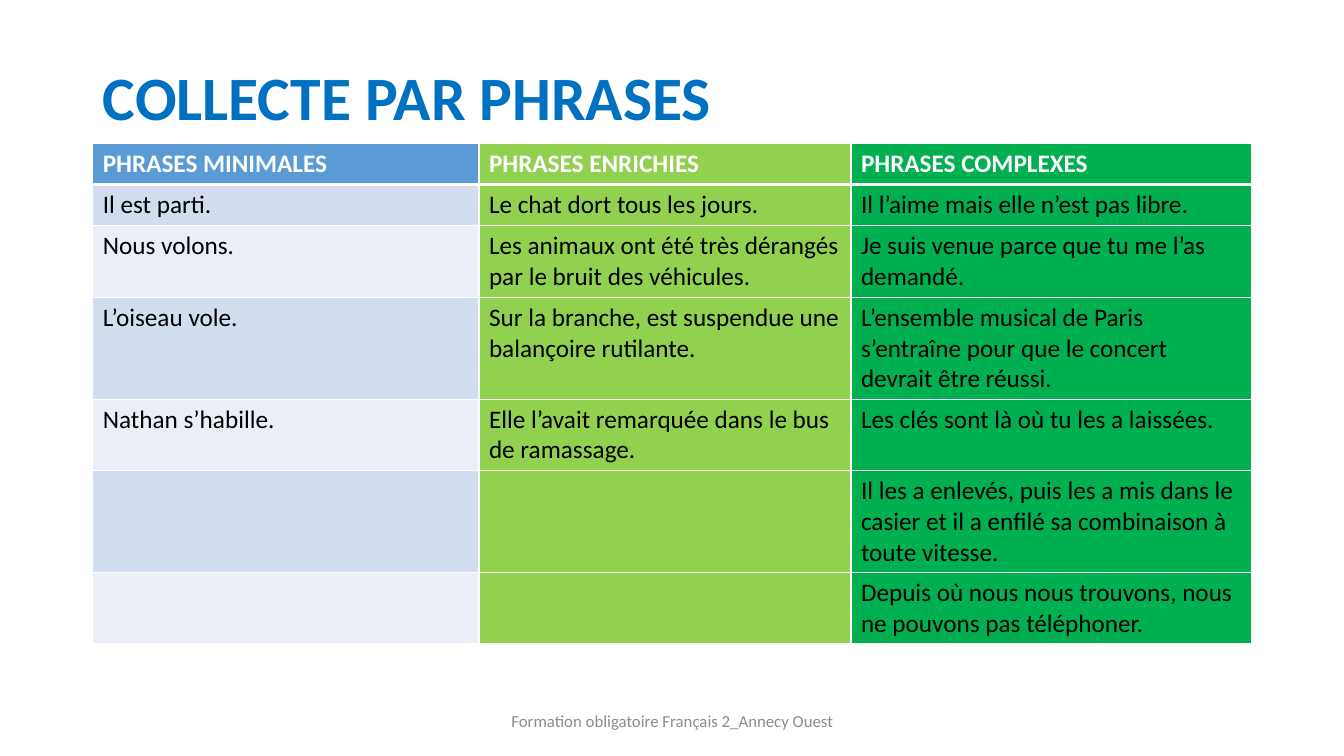
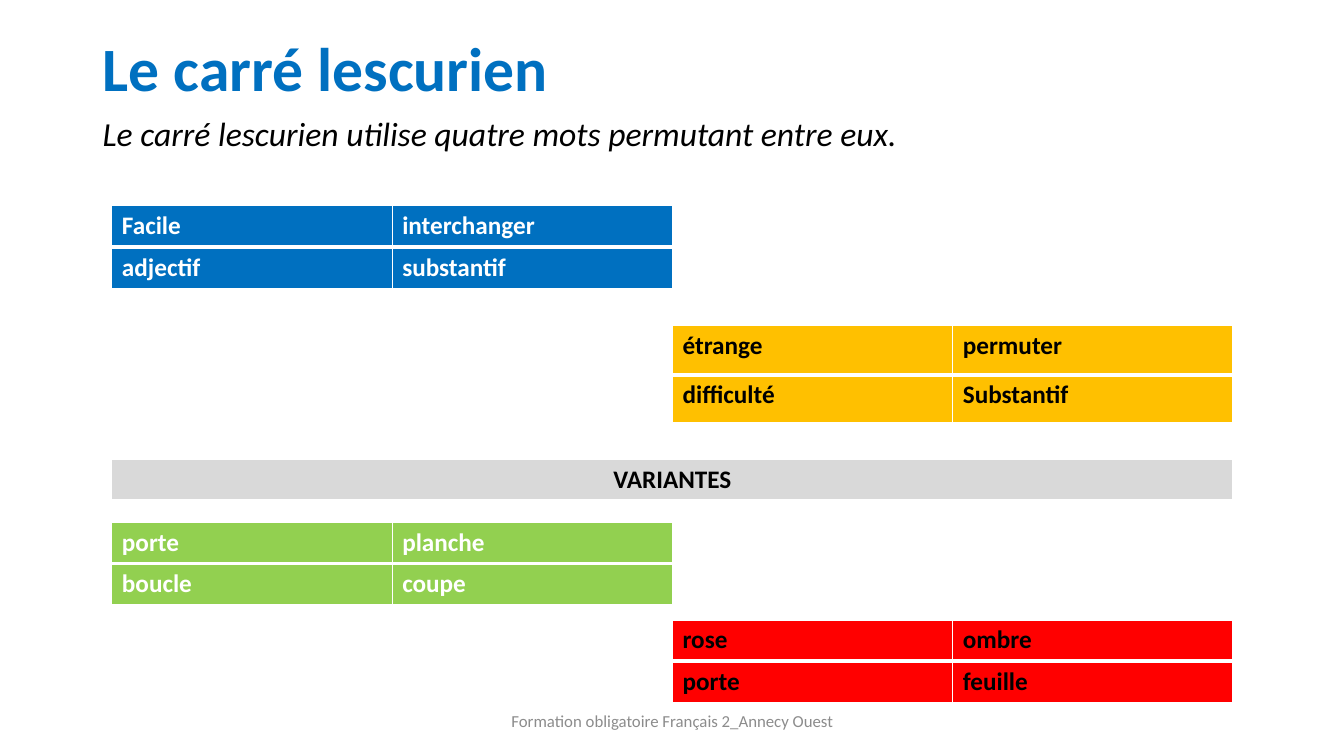
from lxml import etree
from pptx import Presentation
from pptx.dml.color import RGBColor
from pptx.enum.text import MSO_ANCHOR, PP_ALIGN
from pptx.oxml.ns import qn
from pptx.util import Inches, Pt

LEFT, CENTER = PP_ALIGN.LEFT, PP_ALIGN.CENTER
TOP, MIDDLE = MSO_ANCHOR.TOP, MSO_ANCHOR.MIDDLE

FONT = "Calibri"
WHITE = RGBColor(0xFF, 0xFF, 0xFF)
BLACK = RGBColor(0x00, 0x00, 0x00)
BLUE = RGBColor(0x00, 0x70, 0xC0)
HEADER_BLUE = RGBColor(0x5B, 0x9B, 0xD5)
BAND_DARK = RGBColor(0xD2, 0xDE, 0xEF)
BAND_LIGHT = RGBColor(0xEA, 0xEF, 0xF7)
LIME = RGBColor(0x92, 0xD0, 0x50)
GREEN = RGBColor(0x00, 0xB0, 0x50)
AMBER = RGBColor(0xFF, 0xC0, 0x00)
RED = RGBColor(0xFF, 0x00, 0x00)
LIGHT_GRAY = RGBColor(0xD9, 0xD9, 0xD9)
FOOTER_GRAY = RGBColor(0x8C, 0x8C, 0x8C)

MARGIN, CONTENT_WIDTH = 0.92, 11.5
ROW_HEIGHT, EXTRA_LINE = 0.41, 0.3
FOOTER = "Formation obligatoire Français 2_Annecy Ouest"

SENTENCE_COLUMNS = [3.83, 3.69, 3.97]
SENTENCES = [
    ["PHRASES MINIMALES", "PHRASES ENRICHIES", "PHRASES COMPLEXES"],
    ["Il est parti.", "Le chat dort tous les jours.",
     "Il l’aime mais elle n’est pas libre."],
    ["Nous volons.",
     "Les animaux ont été très dérangés par le bruit des véhicules.",
     "Je suis venue parce que tu me l’as demandé."],
    ["L’oiseau vole.",
     "Sur la branche, est suspendue une balançoire rutilante.",
     "L’ensemble musical de Paris s’entraîne pour que le concert devrait être réussi."],
    ["Nathan s’habille.",
     "Elle l’avait remarquée dans le bus de ramassage.",
     "Les clés sont là où tu les a laissées."],
    ["", "",
     "Il les a enlevés, puis les a mis dans le casier et il a enfilé sa "
     "combinaison à toute vitesse."],
    ["", "", "Depuis où nous nous trouvons, nous ne pouvons pas téléphoner."],
]
SENTENCE_LINES = [1, 1, 2, 3, 2, 3, 2]

SQUARE_LEFT, SQUARE_COLUMN = 1.11, 2.78
SQUARE_RIGHT = SQUARE_LEFT + 2 * SQUARE_COLUMN
# left, top, row heights, fill, text colour, words
SQUARES = [
    (SQUARE_LEFT, 2.04, [ROW_HEIGHT] * 2, BLUE, WHITE,
     [["Facile", "interchanger"], ["adjectif", "substantif"]]),
    (SQUARE_RIGHT, 3.23, [0.49, 0.47], AMBER, BLACK,
     [["étrange", "permuter"], ["difficulté", "Substantif"]]),
    (SQUARE_LEFT, 5.18, [ROW_HEIGHT] * 2, LIME, WHITE,
     [["porte", "planche"], ["boucle", "coupe"]]),
    (SQUARE_RIGHT, 6.15, [ROW_HEIGHT] * 2, RED, BLACK,
     [["rose", "ombre"], ["porte", "feuille"]]),
]


def write(text_frame, text, size, color, bold=False, italic=False, align=LEFT):
    paragraph = text_frame.paragraphs[0]
    paragraph.alignment = align
    if text:
        run = paragraph.add_run()
        run.text = text
        font = run.font
        font.name, font.size, font.bold, font.italic = FONT, Pt(size), bold, italic
        font.color.rgb = color
    return paragraph


def add_text(slide, box, text, size, color, anchor=TOP, **style):
    shape = slide.shapes.add_textbox(*map(Inches, box))
    shape.text_frame.word_wrap = True
    shape.text_frame.vertical_anchor = anchor
    return write(shape.text_frame, text, size, color, **style)


def add_slide(presentation, title, top, height):
    """Add a slide with the shared title style and footer."""
    slide = presentation.slides.add_slide(presentation.slide_layouts[5])
    shape = slide.shapes.title
    shape.left, shape.top = Inches(MARGIN), Inches(top)
    shape.width, shape.height = Inches(CONTENT_WIDTH), Inches(height)
    shape.text_frame.vertical_anchor = MIDDLE
    write(shape.text_frame, title, 44, BLUE, bold=True).line_spacing = 0.9
    add_text(slide, (4.42, 6.95, 4.5, 0.4), FOOTER, 12, FOOTER_GRAY,
             anchor=MIDDLE, align=CENTER)
    return slide


def set_borders(cell, row):
    """Draw white borders, thicker under the first row."""
    widths = {"a:lnL": 1, "a:lnR": 1,
              "a:lnT": 3 if row == 1 else 1, "a:lnB": 3 if row == 0 else 1}
    properties = cell._tc.get_or_add_tcPr()
    for tag, width in widths.items():
        line = etree.SubElement(properties, qn(tag), w=str(Pt(width)))
        fill = etree.SubElement(line, qn("a:solidFill"))
        etree.SubElement(fill, qn("a:srgbClr"), val=str(WHITE))


def add_table(slide, left, top, columns, heights, words, style):
    """Add a table; style(row, column) gives fill, text colour, bold and alignment."""
    frame = slide.shapes.add_table(
        len(heights), len(columns), Inches(left), Inches(top),
        Inches(sum(columns)), Inches(sum(heights)))
    table = frame.table
    table.first_row = table.horz_banding = False
    for column, width in zip(table.columns, columns):
        column.width = Inches(width)
    for row, height in zip(table.rows, heights):
        row.height = Inches(height)
    for row, texts in enumerate(words):
        for column, text in enumerate(texts):
            cell = table.cell(row, column)
            fill, color, bold, align = style(row, column)
            set_borders(cell, row)
            cell.fill.solid()
            cell.fill.fore_color.rgb = fill
            write(cell.text_frame, text, 18, color, bold=bold, align=align)


def sentence_style(row, column):
    header = row == 0
    band = BAND_DARK if row % 2 else BAND_LIGHT
    fill = [HEADER_BLUE if header else band, LIME, GREEN][column]
    return fill, WHITE if header else BLACK, header, LEFT


def plain_style(fill, color, align=LEFT):
    return lambda row, column: (fill, color, True, align)


def build_sentences(presentation):
    slide = add_slide(presentation, "COLLECTE PAR PHRASES", 0.4, 1.2)
    heights = [ROW_HEIGHT + EXTRA_LINE * (lines - 1) for lines in SENTENCE_LINES]
    add_table(slide, MARGIN, 1.42, SENTENCE_COLUMNS, heights, SENTENCES, sentence_style)


def build_squares(presentation):
    slide = add_slide(presentation, "Le carré lescurien", 0.18, 1.06)
    subtitle = add_text(
        slide, (MARGIN, 1.12, CONTENT_WIDTH, 0.6),
        "Le carré lescurien utilise quatre mots permutant entre eux.",
        24, BLACK, italic=True)
    subtitle.line_spacing = 0.9
    for left, top, heights, fill, color, words in SQUARES:
        add_table(slide, left, top, [SQUARE_COLUMN] * 2, heights, words,
                  plain_style(fill, color))
    add_table(slide, SQUARE_LEFT, 4.56, [4 * SQUARE_COLUMN], [ROW_HEIGHT],
              [["VARIANTES"]], plain_style(LIGHT_GRAY, BLACK, CENTER))


def main():
    presentation = Presentation()
    presentation.slide_width, presentation.slide_height = Inches(13.33), Inches(7.5)
    build_sentences(presentation)
    build_squares(presentation)
    presentation.save("out.pptx")


if __name__ == "__main__":
    main()
